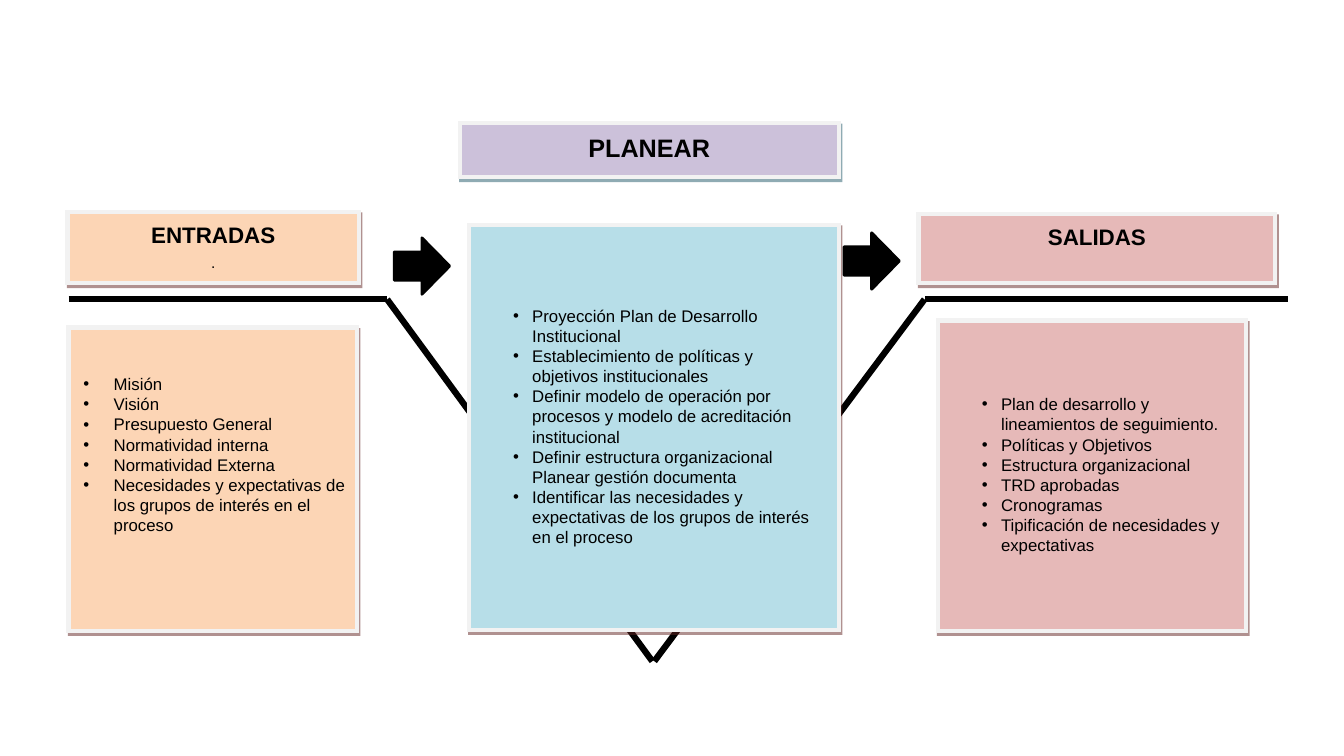
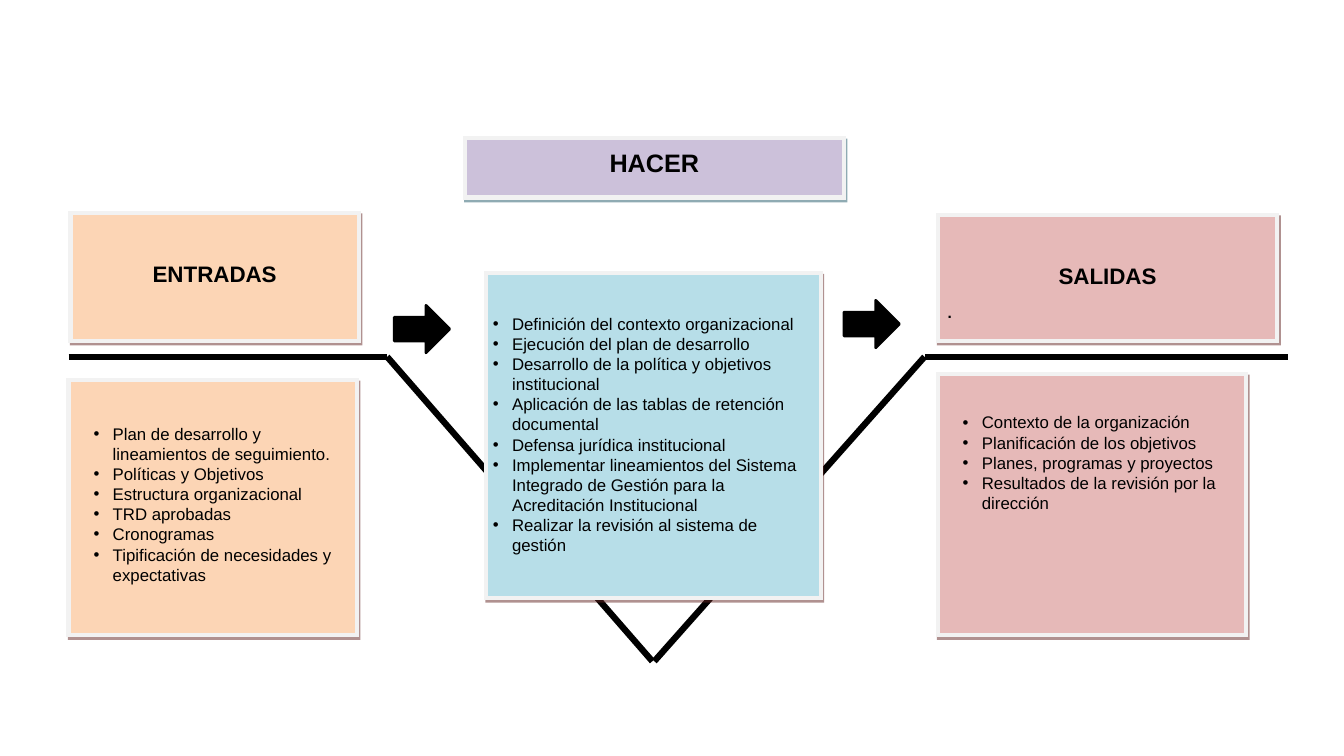
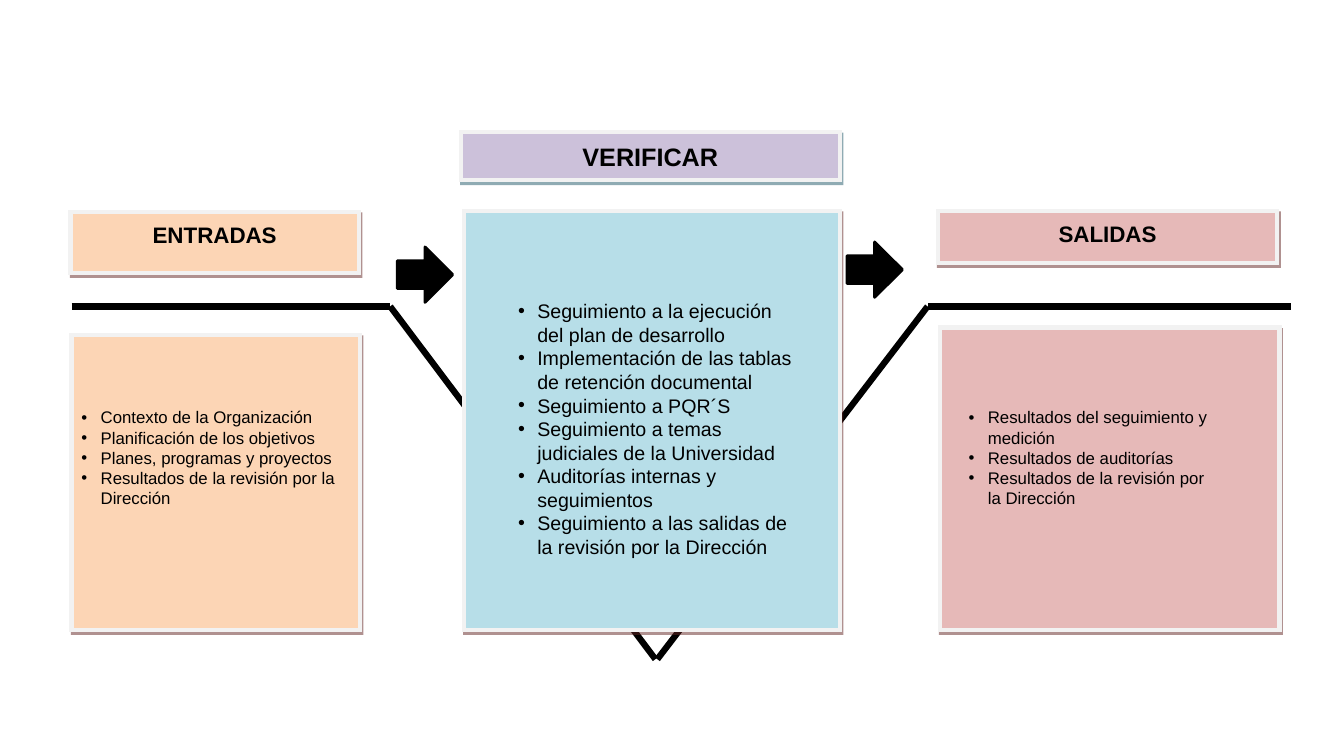
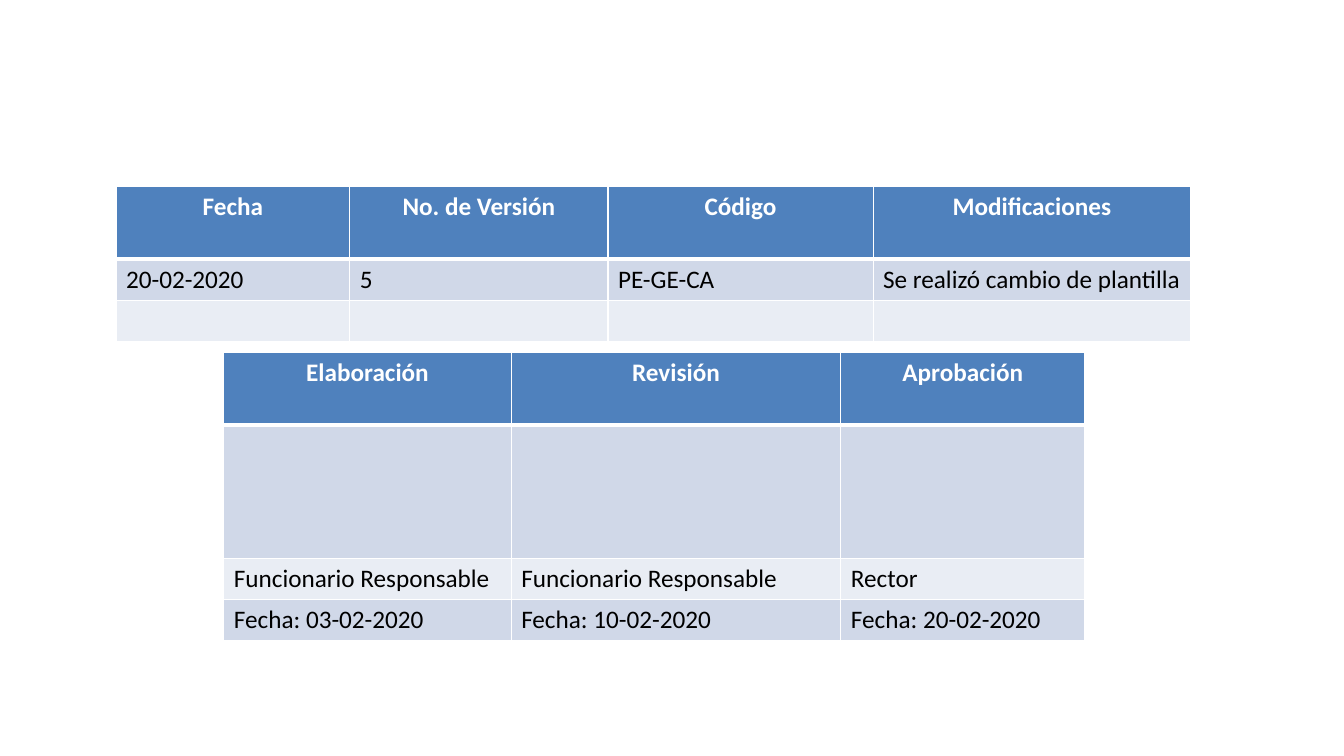
from pptx import Presentation, util as u
from pptx.dml.color import RGBColor
from pptx.enum import shapes, text
from pptx.oxml import ns
from lxml import etree

Inches, Pt = u.Inches, u.Pt

HUES = {
    "in": "FCD5B5", "out": "E6B9B8", "mid": "B7DEE8", "title": "CCC1DA",
    "edge": "F2F2F2", "brown": "632523", "teal": "215968",
    "ink": "000000", "white": "FFFFFF",
    "head": "4F81BD", "odd": "D0D8E8", "even": "E9EDF4",
}
SANS, BODY = "Arial", "Calibri"

PLANS = [
    "Plan de desarrollo y lineamientos de seguimiento.",
    "Políticas y Objetivos",
    "Estructura organizacional",
    "TRD aprobadas",
    "Cronogramas",
    "Tipificación de necesidades y expectativas",
]

# One entry per phase; boxes are left, top, width, height.
# A head is box, top inset, closing dot alignment (or None).
# A list is box, text place (left, top, width), size, indent, items.
PHASES = [
    {
        "title": ("PLANEAR", (4.56, 1.22, 3.76, 0.54)),
        "in": ((0.67, 2.1, 2.89, 0.71), 0.05, text.PP_ALIGN.CENTER),
        "out": ((9.11, 2.12, 3.54, 0.69), 0.05, None),
        "funnel": (0, 2.97, 6.56),
        "arrows": (2.36, 0.56),
        "lists": {
            "in": ((0.68, 3.25, 2.86, 3.01), (0.73, 3.66, 2.86), 12, 0.3, [
                "Misión",
                "Visión",
                "Presupuesto General",
                "Normatividad interna",
                "Normatividad Externa",
                "Necesidades y expectativas de los grupos de interés en el proceso",
            ]),
            "mid": ((4.65, 2.23, 3.67, 4.02), (4.99, 2.98, 3.16), 12, 0.19, [
                "Proyección Plan de Desarrollo Institucional",
                "Establecimiento de políticas y objetivos institucionales",
                "Definir modelo de operación por procesos y modelo de acreditación institucional",
                "Definir estructura organizacional Planear gestión documenta",
                "Identificar las necesidades y expectativas de los grupos de interés en el proceso",
            ]),
            "out": ((9.3, 3.18, 3.06, 3.08), (9.64, 3.86, 2.74), 12, 0.19, PLANS),
        },
    },
    {
        "title": ("HACER", (4.61, 1.37, 3.76, 0.59)),
        "in": ((0.7, 2.11, 2.86, 1.27), 0.43, None),
        "out": ((9.3, 2.13, 3.37, 1.25), 0.43, text.PP_ALIGN.JUSTIFY),
        "funnel": (0, 3.54, 6.56),
        "arrows": (3.03, 0.47),
        "lists": {
            "in": ((0.68, 3.77, 2.86, 2.53), (0.83, 4.15, 2.74), 12, 0.19, PLANS),
            "mid": ((4.82, 2.71, 3.32, 3.22), (4.79, 3.06, 3.32), 12, 0.19, [
                "Definición del contexto organizacional",
                "Ejecución del plan de desarrollo",
                "Desarrollo de la política y objetivos institucional",
                "Aplicación de las tablas de retención documental",
                "Defensa jurídica institucional",
                "Implementar lineamientos del Sistema Integrado de Gestión para la "
                "Acreditación Institucional",
                "Realizar la revisión al sistema de gestión",
            ]),
            "out": ((9.3, 3.71, 3.06, 2.59), (9.45, 4.04, 2.76), 12, 0.19, [
                "Contexto de la organización",
                "Planificación de los objetivos",
                "Planes, programas y proyectos",
                "Resultados de la revisión por la dirección",
            ]),
        },
    },
    {
        "title": ("VERIFICAR", (4.57, 1.31, 3.76, 0.48)),
        "in": ((0.7, 2.1, 2.86, 0.61), 0.05, None),
        "out": ((9.3, 2.09, 3.37, 0.52), 0.05, None),
        "funnel": (0.03, 3.04, 6.54),
        "arrows": (2.45, 0.55),
        "lists": {
            "in": ((0.71, 3.32, 2.86, 2.93), (0.71, 3.99, 2.85), 12, 0.19, [
                "Contexto de la Organización",
                "Planificación de los objetivos",
                "Planes, programas y proyectos",
                "Resultados de la revisión por la Dirección",
            ]),
            "mid": ((4.6, 2.09, 3.73, 4.16), (5.04, 2.92, 2.92), 14, 0.19, [
                "Seguimiento a la ejecución del plan de desarrollo",
                "Implementación de las tablas de retención documental",
                "Seguimiento a PQR´S",
                "Seguimiento a temas judiciales de la Universidad",
                "Auditorías internas y seguimientos",
                "Seguimiento a las salidas de la revisión por la Dirección",
            ]),
            "out": ((9.32, 3.25, 3.37, 3), (9.51, 3.99, 2.63), 12, 0.19, [
                "Resultados del seguimiento y medición",
                "Resultados de auditorías",
                "Resultados de la revisión por la Dirección",
            ]),
        },
    },
]

# Tables: left, top, column widths, row heights, rows
TABLES = [
    (1.15, 1.85, (2.32, 2.56, 2.63, 3.15), (0.72, 0.41, 0.41), [
        ("Fecha", "No. de Versión", "Código", "Modificaciones"),
        ("20-02-2020", "5", "PE-GE-CA", "Se realizó cambio de plantilla"),
        ("",) * 4,
    ]),
    (2.22, 3.5, (2.85, 3.27, 2.42), (0.72, 1.32, 0.41, 0.41), [
        ("Elaboración", "Revisión", "Aprobación"),
        ("",) * 3,
        ("Funcionario Responsable", "Funcionario Responsable", "Rector"),
        ("Fecha: 03-02-2020", "Fecha: 10-02-2020", "Fecha: 20-02-2020"),
    ]),
]


def rgb(hue):
    return RGBColor.from_string(HUES[hue])


def node(parent, tag, **attrs):
    item = etree.SubElement(parent, ns.qn(tag))
    for key, val in attrs.items():
        item.set(key, str(val))
    return item


class Deck:
    def __init__(self):
        self.prs = Presentation()
        self.prs.slide_width, self.prs.slide_height = Inches(13.33), Inches(7.5)
        self.slide = None

    def new(self, layout):
        self.slide = self.prs.slides.add_slide(self.prs.slide_layouts[layout])

    def run(self, para, words, size, bold=False, font=SANS, hue="ink"):
        run = para.add_run()
        run.text = words
        run.font.size, run.font.bold, run.font.name = Pt(size), bold, font
        run.font.color.rgb = rgb(hue)

    def paint(self, shape, fill, edge, width):
        shape.fill.solid()
        shape.fill.fore_color.rgb = rgb(fill)
        shape.line.color.rgb = rgb(edge)
        shape.line.width = Pt(width)
        shape.shadow.inherit = False

    def frame(self, shape, fill, shade="brown"):
        """Pale border with sharp corners and a hard tinted shadow."""
        self.paint(shape, fill, "edge", 3)
        props = shape._element.spPr
        node(props.find(ns.qn("a:ln")), "a:miter", lim=800000)
        cast = node(props.find(ns.qn("a:effectLst")), "a:outerShdw", blurRad=0,
                    dist=Pt(2.2), dir=63 * 60000, algn="ctr", rotWithShape=0)
        node(node(cast, "a:srgbClr", val=HUES[shade]), "a:alpha", val=50000)

    def shape(self, kind, box):
        return self.slide.shapes.add_shape(kind, *map(Inches, box))

    def panel(self, box, fill):
        rect = self.shape(shapes.MSO_SHAPE.RECTANGLE, box)
        self.frame(rect, fill)
        return rect

    def label(self, shape, words, size, inset=0.05):
        frame = shape.text_frame
        frame.word_wrap, frame.auto_size = True, text.MSO_AUTO_SIZE.NONE
        frame.vertical_anchor = text.MSO_ANCHOR.TOP
        frame.margin_top = Inches(inset)
        para = frame.paragraphs[0]
        para.alignment, para.line_spacing = text.PP_ALIGN.CENTER, 1.15
        self.run(para, words, size, True)
        return frame

    def title(self, words, box):
        hold = self.slide.shapes.title
        hold.left, hold.top, hold.width, hold.height = map(Inches, box)
        self.frame(hold, "title", "teal")
        self.label(hold, words, 18)

    def head(self, words, fill, box, inset, dot):
        frame = self.label(self.panel(box, fill), words, 16, inset)
        if dot is not None:
            frame.paragraphs[0].space_after = Pt(6 if inset > 0.05 else 0)
            para = frame.add_paragraph()
            para.alignment, para.line_spacing = dot, 1.15
            para.space_before = Pt(2)
            self.run(para, ".", 11, dot == text.PP_ALIGN.JUSTIFY)

    def line(self, start, end):
        bar = self.slide.shapes.add_connector(
            shapes.MSO_CONNECTOR.STRAIGHT, *map(Inches, start + end))
        bar.line.color.rgb = rgb("ink")
        bar.line.width = Pt(4.5)
        node(bar._element.spPr, "a:effectLst")

    def funnel(self, shift, top, tip):
        for outer, bend, foot in ((0.68, 3.84, 6.47), (12.77, 9.17, 6.49)):
            knee = (bend + shift, top)
            self.line((outer + shift, top), knee)
            self.line(knee, (foot + shift, tip))

    def arrows(self, shift, top, high):
        for left, rise in ((3.91, 0), (8.37, 0.05)):
            arrow = self.shape(shapes.MSO_SHAPE.RIGHT_ARROW,
                               (left + shift, top - rise, 0.55, high))
            self.paint(arrow, "ink", "ink", 2)

    def bullets(self, place, high, size, indent, items):
        box = self.slide.shapes.add_textbox(*map(Inches, place + (high,)))
        frame = box.text_frame
        frame.word_wrap = True
        for num, words in enumerate(items):
            para = frame.add_paragraph() if num else frame.paragraphs[0]
            props = para._p.get_or_add_pPr()
            props.set("marL", str(Inches(indent)))
            props.set("indent", str(-Inches(indent)))
            node(props, "a:buFont", typeface=SANS)
            node(props, "a:buChar", char="•")
            self.run(para, words, size)

    def cell(self, cell, words, row):
        props = cell._tc.get_or_add_tcPr()
        wide = {"a:lnT": 3 if row == 1 else 1, "a:lnB": 1 if row else 3}
        for side in ("a:lnL", "a:lnR", "a:lnT", "a:lnB"):
            edge = node(props, side, w=Pt(wide.get(side, 1)))
            node(node(edge, "a:solidFill"), "a:srgbClr", val=HUES["white"])
        cell.fill.solid()
        cell.fill.fore_color.rgb = rgb(("even", "odd")[row % 2] if row else "head")
        if words:
            para = cell.text_frame.paragraphs[0]
            if not row:
                para.alignment = text.PP_ALIGN.CENTER
            self.run(para, words, 18, not row, BODY, "ink" if row else "white")

    def table(self, left, top, cols, highs, rows):
        box = (left, top, sum(cols), sum(highs))
        grid = self.slide.shapes.add_table(
            len(rows), len(cols), *map(Inches, box)).table
        for col, wide in zip(grid.columns, cols):
            col.width = Inches(wide)
        for row, high in zip(grid.rows, highs):
            row.height = Inches(high)
        for num, row in enumerate(rows):
            for col, words in enumerate(row):
                self.cell(grid.cell(num, col), words, num)

    def phase(self, data):
        self.new(5)
        self.title(*data["title"])
        self.head("ENTRADAS", "in", *data["in"])
        self.head("SALIDAS", "out", *data["out"])
        # Funnel lines run behind the panels
        self.funnel(*data["funnel"])
        for hue, (box, *_) in data["lists"].items():
            self.panel(box, hue)
        self.arrows(data["funnel"][0], *data["arrows"])
        for box, place, size, indent, items in data["lists"].values():
            high = box[1] + box[3] - place[1] - 0.5
            self.bullets(place, round(high, 2), size, indent, items)


def main():
    deck = Deck()
    # Process phases
    for data in PHASES:
        deck.phase(data)
    # Version control
    deck.new(6)
    for data in TABLES:
        deck.table(*data)
    deck.prs.save("out.pptx")


if __name__ == "__main__":
    main()
